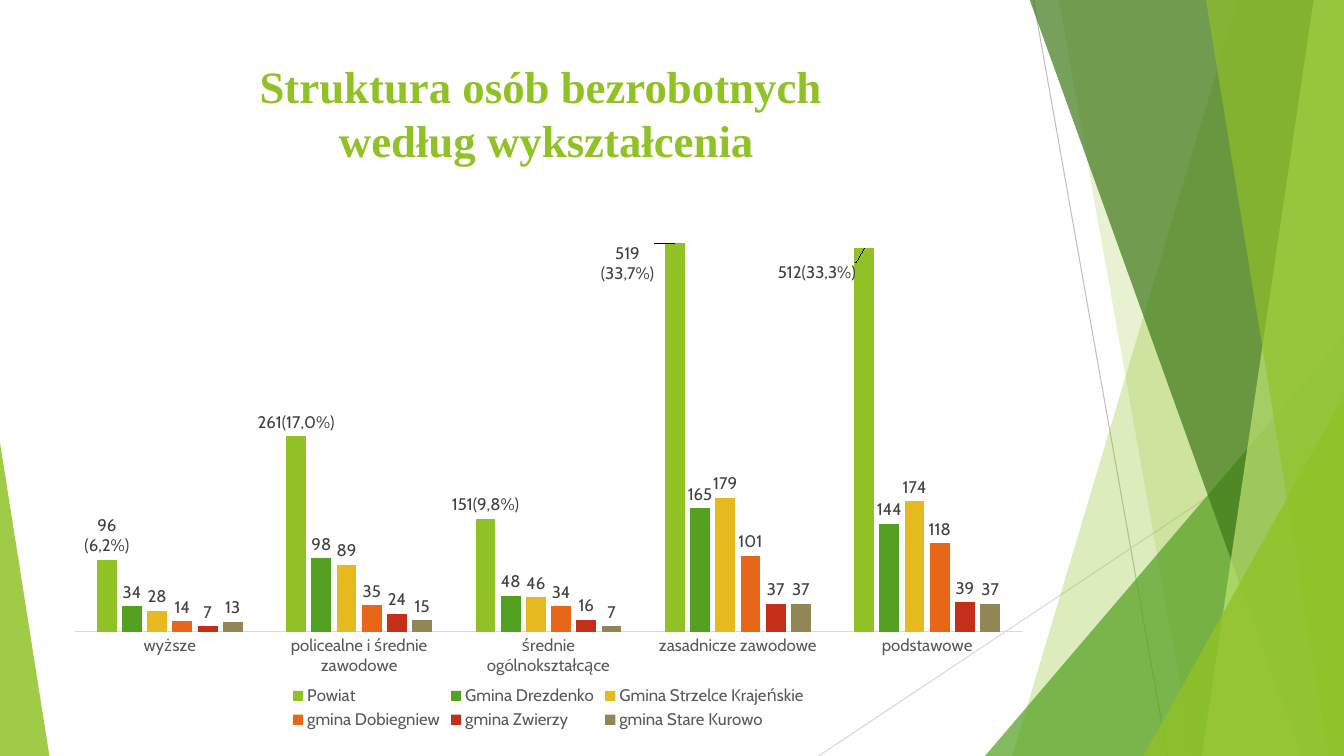
from dataclasses import dataclass

import lxml.etree
import pptx
import pptx.chart.data
import pptx.chart.series
import pptx.dml.color
import pptx.dml.fill
import pptx.enum.chart
import pptx.enum.shapes
import pptx.enum.text
import pptx.oxml.ns
import pptx.shapes.autoshape
import pptx.slide
import pptx.text.text
import pptx.util

Inches = pptx.util.Inches
qn = pptx.oxml.ns.qn

WIDTH, HEIGHT, TOP = 13.33, 7.5, -0.01
CHART_FONT = "Cabin"
COLORS = {
    "white": "FFFFFF",
    "lime": "90C226",
    "green": "54A021",
    "forest": "3F7819",
    "pale": "C0E474",
    "gold": "E6B91E",
    "orange": "E76618",
    "red": "C42F1A",
    "khaki": "918655",
    "line": "BFBFBF",
    "light line": "D9D9D9",
    "axis text": "595959",
    "label text": "404040",
}


@dataclass
class Ray:
    start: tuple[float, float]
    end: tuple[float, float]
    color: str


@dataclass
class Blade:
    top_x: float
    bottom_x: float
    color: str
    opacity: int


@dataclass
class Corner:
    left: float
    top: float
    width: float
    apex: float
    color: str
    opacity: int


@dataclass
class Area:
    name: str
    values: tuple[int, ...]
    color: str


@dataclass
class PowiatLabel:
    lines: tuple[str, ...]
    shift: tuple[float, float] | None = None


DECORATIONS = (
    Ray((10.25, 0), (11.58, HEIGHT), "line"),
    Ray((WIDTH, 4.03), (8.12, HEIGHT), "light line"),
    Blade(12.28, 10.04, "lime", 30),
    Blade(10.5, 11.83, "lime", 20),
    Corner(9.77, 3.33, 3.56, 1, "green", 72),
    Blade(10.21, 12.91, "forest", 70),
    Blade(13.03, 11.92, "pale", 70),
    Blade(11.96, 13.18, "lime", 65),
    Corner(11.34, 3.93, 1.99, 1, "lime", 80),
    Corner(0, 4.39, 0.49, 0, "lime", 85),
)
CATEGORIES = (
    "wyższe",
    "policealne i średnie zawodowe",
    "średnie ogólnokształcące",
    "zasadnicze zawodowe",
    "podstawowe",
)
AREAS = (
    Area("Powiat", (96, 261, 151, 519, 512), "lime"),
    Area("Gmina Drezdenko", (34, 98, 48, 165, 144), "green"),
    Area("Gmina Strzelce Krajeńskie", (28, 89, 46, 179, 174), "gold"),
    Area("gmina Dobiegniew", (14, 35, 34, 101, 118), "orange"),
    Area("gmina Zwierzy", (7, 24, 16, 37, 39), "red"),
    Area("gmina Stare Kurowo", (13, 15, 7, 37, 37), "khaki"),
)
POWIAT_LABELS = (
    PowiatLabel(("96", "(6,2%)")),
    PowiatLabel(("261(17,0%)",)),
    PowiatLabel(("151(9,8%)",)),
    PowiatLabel(("519", "(33,7%)"), (-0.05, 0.08)),
    PowiatLabel(("512(33,3%)",), (-0.05, 0.07)),
)


def rgb(name: str) -> pptx.dml.color.RGBColor:
    return pptx.dml.color.RGBColor.from_string(COLORS[name])


def paint(fill: pptx.dml.fill.FillFormat, color: str) -> None:
    fill.solid()
    fill.fore_color.rgb = rgb(color)


def set_font(font: pptx.text.text.Font, name: str, size: int, color: str, bold: bool = False) -> None:
    font.name = name
    font.size = pptx.util.Pt(size)
    font.bold = bold
    font.color.rgb = rgb(color)


def draw_ray(slide: pptx.slide.Slide, ray: Ray) -> None:
    ends = [Inches(value) for value in ray.start + ray.end]
    connector = slide.shapes.add_connector(pptx.enum.shapes.MSO_CONNECTOR.STRAIGHT, *ends)
    connector.line.color.rgb = rgb(ray.color)
    connector.line.width = pptx.util.Pt(0.75)
    lxml.etree.SubElement(connector._element.spPr, qn("a:effectLst"))


def draw_glass(slide: pptx.slide.Slide, glass: Blade | Corner) -> None:
    if isinstance(glass, Blade):
        builder = slide.shapes.build_freeform(Inches(glass.top_x), Inches(TOP))
        corners = ((WIDTH, TOP), (WIDTH, HEIGHT), (glass.bottom_x, HEIGHT))
        builder.add_line_segments([(Inches(x), Inches(y)) for x, y in corners], close=True)
        shape = builder.convert_to_shape()
    else:
        shape = slide.shapes.add_shape(
            pptx.enum.shapes.MSO_SHAPE.ISOSCELES_TRIANGLE,
            Inches(glass.left), Inches(glass.top), Inches(glass.width), Inches(HEIGHT - glass.top),
        )
        shape.adjustments[0] = glass.apex
    shape.shadow.inherit = False
    shape.line.fill.background()
    paint(shape.fill, glass.color)
    color = shape._element.spPr.find(qn("a:solidFill")).find(qn("a:srgbClr"))
    lxml.etree.SubElement(color, qn("a:alpha"), val=str(glass.opacity * 1000))


def make_layout(**settings: str | float) -> lxml.etree._Element:
    layout = pptx.oxml.parse_xml(f'<c:layout {pptx.oxml.ns.nsdecls("c")}/>')
    manual = lxml.etree.SubElement(layout, qn("c:manualLayout"))
    for tag, value in settings.items():
        lxml.etree.SubElement(manual, qn(f"c:{tag}"), val=str(value))
    return layout


def label_powiat(series: pptx.chart.series.BarSeries) -> None:
    for index, label in enumerate(POWIAT_LABELS):
        data_label = series.points[index].data_label
        frame = data_label.text_frame
        for number, line in enumerate(label.lines):
            paragraph = frame.add_paragraph() if number else frame.paragraphs[0]
            run = paragraph.add_run()
            run.text = line
            set_font(run.font, CHART_FONT, 12, "label text")
        data_label.position = pptx.enum.chart.XL_LABEL_POSITION.OUTSIDE_END
        if label.shift:
            x, y = label.shift
            element = series.data_labels._element.findall(qn("c:dLbl"))[index]
            element.find(qn("c:idx")).addnext(make_layout(x=x, y=y))


def draw_chart(slide: pptx.slide.Slide) -> None:
    data = pptx.chart.data.CategoryChartData()
    data.categories = CATEGORIES
    for area in AREAS:
        data.add_series(area.name, area.values)
    chart = slide.shapes.add_chart(
        pptx.enum.chart.XL_CHART_TYPE.COLUMN_CLUSTERED,
        Inches(0.74), Inches(1.81), Inches(9.4), Inches(5.47), data,
    ).chart
    set_font(chart.font, CHART_FONT, 12, "axis text")
    chart.has_title = False
    chart.has_legend = True
    chart.legend.position = pptx.enum.chart.XL_LEGEND_POSITION.BOTTOM
    chart.legend.include_in_layout = False
    set_font(chart.legend.font, CHART_FONT, 12, "axis text")

    for axis in (chart.category_axis, chart.value_axis):
        axis.has_major_gridlines = False
        axis.major_tick_mark = pptx.enum.chart.XL_TICK_MARK.NONE
        axis.minor_tick_mark = pptx.enum.chart.XL_TICK_MARK.NONE
        set_font(axis.tick_labels.font, CHART_FONT, 12, "axis text")
    chart.category_axis.format.line.color.rgb = rgb("light line")
    chart.category_axis.format.line.width = pptx.util.Pt(0.75)
    chart.value_axis.format.line.fill.background()
    chart.value_axis.tick_label_position = pptx.enum.chart.XL_TICK_LABEL_POSITION.NONE
    chart.value_axis.minimum_scale = 0
    chart.value_axis.maximum_scale = 600

    plot = chart.plots[0]
    plot.gap_width = 219
    plot.overlap = -27
    plot.vary_by_categories = False
    for series, area in zip(plot.series, AREAS):
        paint(series.format.fill, area.color)
        labels = series.data_labels
        labels.show_value = True
        labels.position = pptx.enum.chart.XL_LABEL_POSITION.OUTSIDE_END
        set_font(labels.font, CHART_FONT, 12, "label text")
    label_powiat(plot.series[0])

    plot_area = chart._chartSpace.chart.plotArea
    for layout in plot_area.findall(qn("c:layout")):
        plot_area.remove(layout)
    plot_area.insert(0, make_layout(
        layoutTarget="inner", xMode="edge", yMode="edge", x=0, y=0, w=1, h=0.815))


def draw_title(slide: pptx.slide.Slide) -> None:
    title = slide.shapes.add_shape(
        pptx.enum.shapes.MSO_SHAPE.RECTANGLE, Inches(0.74), Inches(0.23), Inches(9.36), Inches(1.78))
    title.shadow.inherit = False
    paint(title.fill, "white")
    title.line.color.rgb = rgb("white")
    title.line.width = pptx.util.Pt(1.5)
    frame = title.text_frame
    frame.word_wrap = True
    frame.vertical_anchor = pptx.enum.text.MSO_ANCHOR.MIDDLE
    for number, line in enumerate(("Struktura osób bezrobotnych ", "według wykształcenia")):
        paragraph = frame.add_paragraph() if number else frame.paragraphs[0]
        paragraph.alignment = pptx.enum.text.PP_ALIGN.CENTER
        run = paragraph.add_run()
        run.text = line
        set_font(run.font, "Times New Roman", 32, "lime", bold=True)


def main() -> None:
    presentation = pptx.Presentation()
    presentation.slide_width = Inches(WIDTH)
    presentation.slide_height = Inches(HEIGHT)
    slide = presentation.slides.add_slide(presentation.slide_layouts[6])
    for decoration in DECORATIONS:
        if isinstance(decoration, Ray):
            draw_ray(slide, decoration)
        else:
            draw_glass(slide, decoration)
    draw_chart(slide)
    draw_title(slide)
    presentation.save("out.pptx")


if __name__ == "__main__":
    main()
